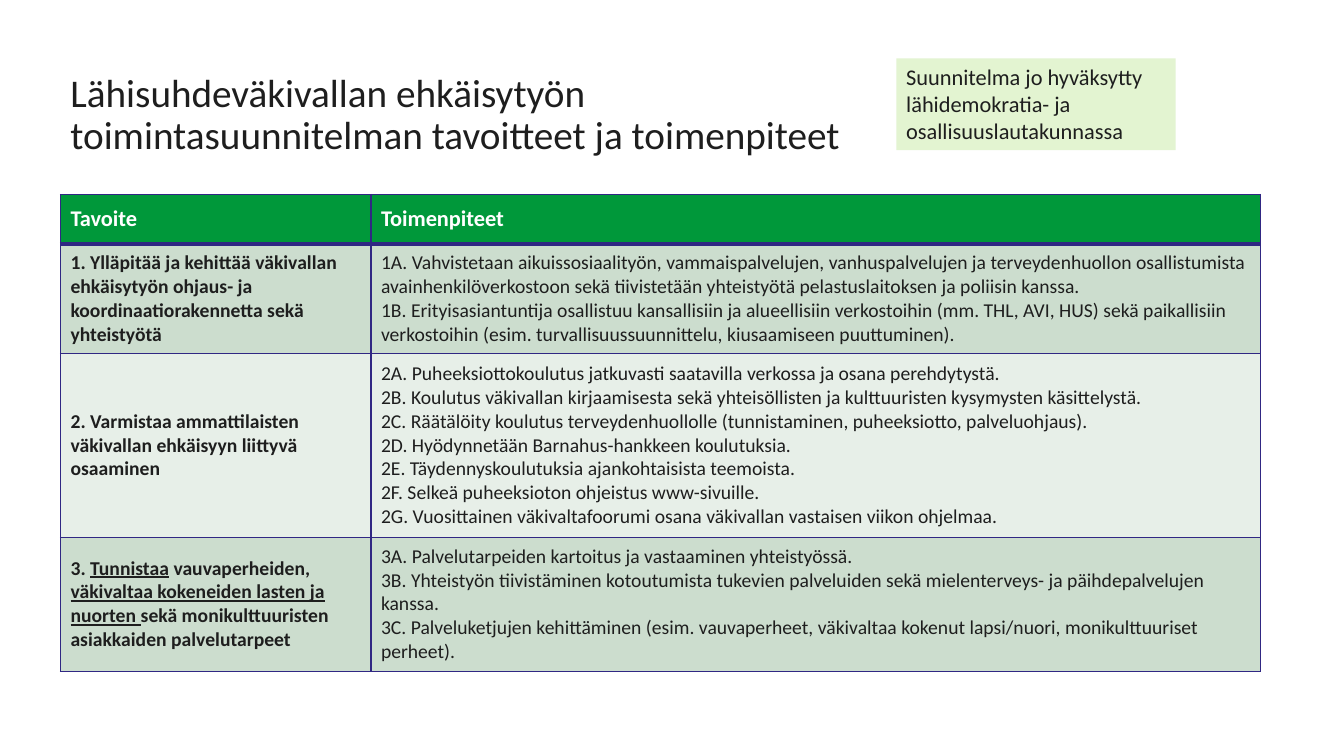
from lxml.etree import SubElement
from pptx import Presentation
from pptx.dml.color import RGBColor
from pptx.enum.shapes import MSO_SHAPE as Shape
from pptx.enum.text import MSO_ANCHOR as Anchor, PP_ALIGN as Align
from pptx.oxml.ns import qn
from pptx.util import Inches, Pt

INK = RGBColor(0x1E, 0x1E, 0x1E)
WHITE = RGBColor(0xFF, 0xFF, 0xFF)
GREEN = RGBColor(0x00, 0x98, 0x3A)
SAGE = RGBColor(0xCC, 0xDD, 0xCE)
MIST = RGBColor(0xE7, 0xEF, 0xE8)
LIME = RGBColor(0xE3, 0xF4, 0xD1)
NAVY = RGBColor(0x30, 0x27, 0x83)

PAGE_WIDTH, PAGE_HEIGHT = Inches(13.33), Inches(7.5)
FONT = "Calibri"

TITLE = "Lähisuhdeväkivallan ehkäisytyön toimintasuunnitelman tavoitteet ja toimenpiteet"
NOTICE = "Suunnitelma jo hyväksytty lähidemokratia- ja osallisuuslautakunnassa"
HEADINGS = ("Tavoite", "Toimenpiteet")

# Each goal is a list of (text, underlined) spans, followed by its actions.
GOALS = [
    ([("1. Ylläpitää ja kehittää väkivallan ehkäisytyön ohjaus- ja "
       "koordinaatiorakennetta sekä yhteistyötä", False)],
     ["1A. Vahvistetaan aikuissosiaalityön, vammaispalvelujen, vanhuspalvelujen ja "
      "terveydenhuollon osallistumista avainhenkilöverkostoon sekä tiivistetään "
      "yhteistyötä pelastuslaitoksen ja poliisin kanssa.",
      "1B. Erityisasiantuntija osallistuu kansallisiin ja alueellisiin verkostoihin "
      "(mm. THL, AVI, HUS) sekä paikallisiin verkostoihin (esim. "
      "turvallisuussuunnittelu, kiusaamiseen puuttuminen)."]),
    ([("2. Varmistaa ammattilaisten väkivallan ehkäisyyn liittyvä osaaminen", False)],
     ["2A. Puheeksiottokoulutus jatkuvasti saatavilla verkossa ja osana perehdytystä.",
      "2B. Koulutus väkivallan kirjaamisesta sekä yhteisöllisten ja kulttuuristen "
      "kysymysten käsittelystä.",
      "2C. Räätälöity koulutus terveydenhuollolle (tunnistaminen, puheeksiotto, "
      "palveluohjaus).",
      "2D. Hyödynnetään Barnahus-hankkeen koulutuksia.",
      "2E. Täydennyskoulutuksia ajankohtaisista teemoista.",
      "2F. Selkeä puheeksioton ohjeistus www-sivuille.",
      "2G. Vuosittainen väkivaltafoorumi osana väkivallan vastaisen viikon ohjelmaa."]),
    ([("3. ", False), ("Tunnistaa", True), (" vauvaperheiden, ", False),
      ("väkivaltaa kokeneiden lasten ja nuorten ", True),
      ("sekä monikulttuuristen asiakkaiden palvelutarpeet", False)],
     ["3A. Palvelutarpeiden kartoitus ja vastaaminen yhteistyössä.",
      "3B. Yhteistyön tiivistäminen kotoutumista tukevien palveluiden sekä "
      "mielenterveys- ja päihdepalvelujen kanssa.",
      "3C. Palveluketjujen kehittäminen (esim. vauvaperheet, väkivaltaa kokenut "
      "lapsi/nuori, monikulttuuriset perheet)."]),
]


def across(percent):
    return int(PAGE_WIDTH * percent / 100)


def down(percent):
    return int(PAGE_HEIGHT * percent / 100)


def area(left, top, width, height):
    """Turn percentages of the page into a position and size."""
    return across(left), down(top), across(width), down(height)


def style(para, size, color=INK, bold=False):
    para.alignment = Align.LEFT
    font = para.font
    font.name, font.size, font.bold = FONT, Pt(size), bold
    font.color.rgb = color


def add_title(page):
    frame = page.shapes.add_textbox(*area(4.5, 6, 66.15, 15.6)).text_frame
    frame.word_wrap = True
    frame.vertical_anchor = Anchor.BOTTOM
    para = frame.paragraphs[0]
    para.text = TITLE
    para.line_spacing = 0.9
    style(para, 28)


def add_notice(page):
    box = page.shapes.add_shape(Shape.RECTANGLE, *area(66.69, 7.73, 20.78, 12.13))
    box.shadow.inherit = False
    box.fill.solid()
    box.fill.fore_color.rgb = LIME
    box.line.fill.background()
    frame = box.text_frame
    frame.word_wrap = True
    frame.vertical_anchor = Anchor.TOP
    frame.paragraphs[0].text = NOTICE
    style(frame.paragraphs[0], 16)


def set_borders(cell, widths):
    """Draw the left, right, top and bottom borders, with widths in points."""
    properties = cell._tc.get_or_add_tcPr()
    for index, (side, width) in enumerate(zip(("lnL", "lnR", "lnT", "lnB"), widths)):
        line = properties.makeelement(qn(f"a:{side}"), {"w": str(Pt(width))})
        fill = SubElement(line, qn("a:solidFill"))
        SubElement(fill, qn("a:srgbClr"), val=str(NAVY))
        properties.insert(index, line)


def fill_cell(cell, spans, color, size=14, ink=INK, bold=False):
    cell.vertical_anchor = Anchor.MIDDLE
    cell.fill.solid()
    cell.fill.fore_color.rgb = color
    para = cell.text_frame.paragraphs[0]
    for text, underlined in spans:
        for number, part in enumerate(text.split("\n")):
            if number:
                para.add_line_break()
            span = para.add_run()
            span.text = part
            if underlined:
                span.font.underline = True
    style(para, size, ink, bold)


def add_goal_table(page):
    columns, rows = (23.1, 66.17), (6.53, 14.53, 24.27, 17.73)
    place = area(4.5, 25.73, sum(columns), sum(rows))
    table = page.shapes.add_table(len(rows), len(columns), *place).table
    for column, width in zip(table.columns, columns):
        column.width = across(width)
    for row, height in zip(table.rows, rows):
        row.height = down(height)

    for column, heading in enumerate(HEADINGS):
        fill_cell(table.cell(0, column), [(heading, False)], GREEN, 16, WHITE, True)
    for row, (goal, actions) in enumerate(GOALS, start=1):
        color = SAGE if row % 2 else MIST
        fill_cell(table.cell(row, 0), goal, color, bold=True)
        fill_cell(table.cell(row, 1), [("\n".join(actions), False)], color)

    for row in range(len(rows)):
        top, bottom = 3 if row == 1 else 1, 3 if row == 0 else 1
        for column in range(len(columns)):
            set_borders(table.cell(row, column), (1, 1, top, bottom))


def main():
    deck = Presentation()
    deck.slide_width, deck.slide_height = PAGE_WIDTH, PAGE_HEIGHT
    page = deck.slides.add_slide(deck.slide_layouts[6])
    add_title(page)
    add_goal_table(page)
    add_notice(page)
    deck.save("out.pptx")


if __name__ == "__main__":
    main()
